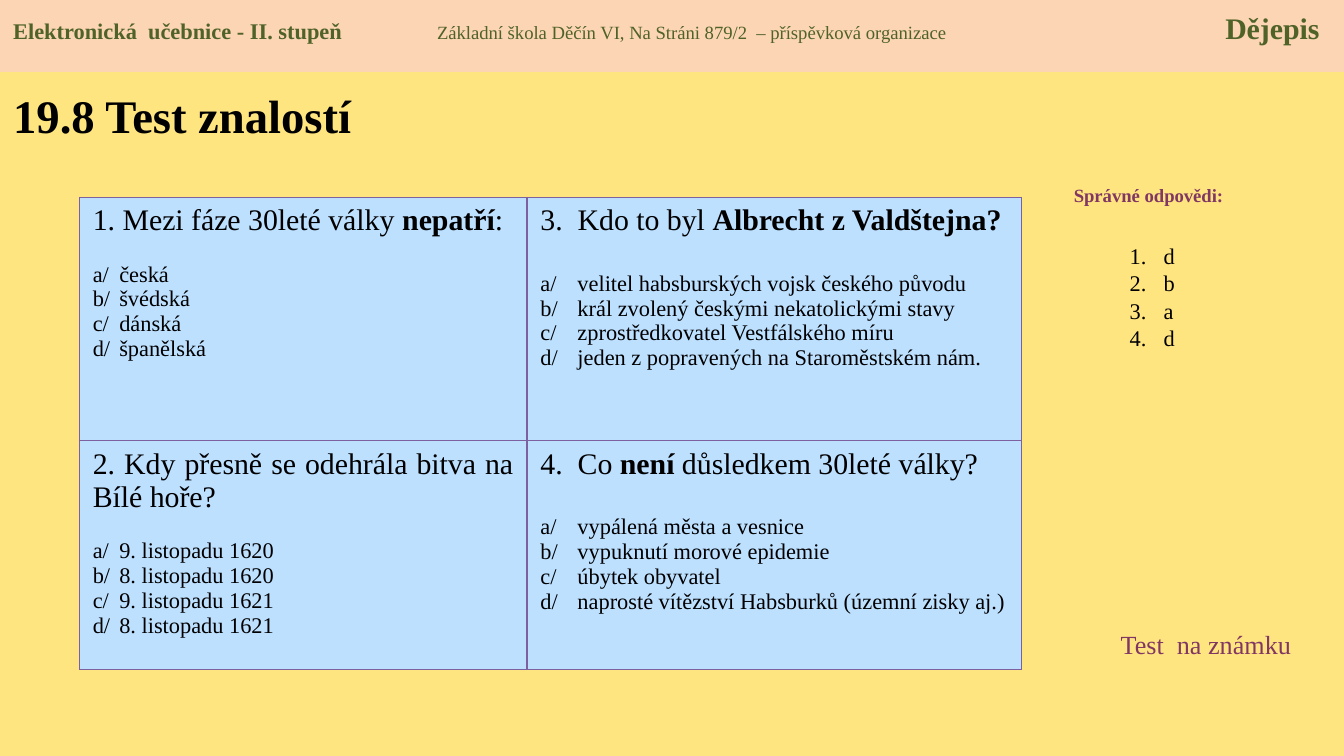
from lxml import etree
from pptx import Presentation
from pptx import util as u
from pptx.dml.color import RGBColor
from pptx.enum import shapes, text
from pptx.oxml import ns

FONT = "Times New Roman"
COLORS = {
    "page": "FFE57F",
    "band": "FCD5B5",
    "green": "4F6228",
    "purple": "813763",
    "black": "000000",
    "cell": "BDE0FF",
    "border": "7D60A0",
}
LEFT_GAP, RIGHT_GAP = 13.4, 18.3
LEFT_HANG, RIGHT_HANG = 0.5, 0.7
QUESTIONS = [
    [
        ([("1. Mezi fáze 30leté války ", False), ("nepatří", True), (":", False)],
         ["česká", "švédská", "dánská", "španělská"]),
        ([("3.  Kdo to byl ", False), ("Albrecht z Valdštejna?", True)],
         ["velitel habsburských vojsk českého původu",
          "král zvolený českými nekatolickými stavy",
          "zprostředkovatel Vestfálského míru",
          "jeden z popravených na Staroměstském nám."]),
    ],
    [
        ([("2. Kdy přesně se odehrála bitva na Bílé hoře?", False)],
         ["9. listopadu 1620", "8. listopadu 1620",
          "9. listopadu 1621", "8. listopadu 1621"]),
        ([("4.  Co ", False), ("není ", True), ("důsledkem 30leté války?", False)],
         ["vypálená města a vesnice", "vypuknutí morové epidemie",
          "úbytek obyvatel",
          "naprosté vítězství Habsburků (územní zisky aj.)"]),
    ],
]


def rgb(name):
    return RGBColor.from_string(COLORS[name])


def set_font(font, size, color="black", bold=None):
    font.name = FONT
    font.size = u.Pt(size)
    font.color.rgb = rgb(color)
    font.bold = bold


def hang(paragraph, indent):
    properties = paragraph._p.get_or_add_pPr()
    properties.set("marL", str(u.Cm(indent)))
    properties.set("indent", str(-u.Cm(indent)))
    return properties


def add_label(slide, box, wording, size, color="black", bold=False,
              align=text.PP_ALIGN.LEFT, anchor=text.MSO_ANCHOR.TOP):
    frame = slide.shapes.add_textbox(*map(u.Cm, box)).text_frame
    frame.word_wrap = True
    frame.vertical_anchor = anchor
    line = frame.paragraphs[0]
    line.text = wording
    line.alignment = align
    set_font(line.font, size, color, bold)


def add_header(slide):
    band = slide.shapes.add_shape(
        shapes.MSO_SHAPE.RECTANGLE, 0, 0, u.Cm(25.4), u.Cm(1.36))
    band.shadow.inherit = False
    band.fill.solid()
    band.fill.fore_color.rgb = rgb("band")
    band.line.fill.background()
    frame = band.text_frame
    frame.vertical_anchor = text.MSO_ANCHOR.TOP
    frame.margin_top = u.Cm(0.18)
    line = frame.paragraphs[0]
    line.alignment = text.PP_ALIGN.LEFT
    stops = etree.SubElement(line._p.get_or_add_pPr(), ns.qn("a:tabLst"))
    for position, side in ((8.01, "l"), (24.69, "r")):
        etree.SubElement(stops, ns.qn("a:tab"), pos=str(u.Cm(position)), algn=side)
    for wording, size, bold in (
            ("Elektronická  učebnice - II. stupeň\t", 12, True),
            ("Základní škola Děčín VI, Na Stráni 879/2  – příspěvková organizace\t",
             10, False),
            ("Dějepis", 16, True)):
        run = line.add_run()
        run.text = wording
        set_font(run.font, size, "green", bold)


def add_borders(cell):
    properties = cell._tc.get_or_add_tcPr()
    for position, side in enumerate(("lnL", "lnR", "lnT", "lnB")):
        edge = etree.Element(ns.qn(f"a:{side}"), w=str(u.Pt(0.75)))
        fill = etree.SubElement(edge, ns.qn("a:solidFill"))
        etree.SubElement(fill, ns.qn("a:srgbClr"), val=COLORS["border"])
        properties.insert(position, edge)


def fill_cell(cell, question, options, gap, indent):
    cell.fill.solid()
    cell.fill.fore_color.rgb = rgb("cell")
    add_borders(cell)
    frame = cell.text_frame
    heading = frame.paragraphs[0]
    heading.alignment = text.PP_ALIGN.JUSTIFY
    set_font(heading.font, 16)
    for wording, bold in question:
        run = heading.add_run()
        run.text = wording
        set_font(run.font, 16, bold=bold)
    for letter, option in zip("abcd", options):
        line = frame.add_paragraph()
        line.text = f"{letter}/\t{option}"
        line.alignment = text.PP_ALIGN.JUSTIFY
        line.line_spacing = u.Pt(13.3)
        line.space_before = u.Pt(gap if letter == "a" else 0)
        hang(line, indent)
        set_font(line.font, 12)


def add_questions(slide):
    table = slide.shapes.add_table(
        2, 2, u.Cm(1.5), u.Cm(3.73), u.Cm(17.81), u.Cm(8.92)).table
    table.first_row = table.horz_banding = False
    for column, width in zip(table.columns, (8.46, 9.35)):
        column.width = u.Cm(width)
    for row, height in zip(table.rows, (4.6, 4.32)):
        row.height = u.Cm(height)
    layout = ((LEFT_GAP, LEFT_HANG), (RIGHT_GAP, RIGHT_HANG))
    for row, questions in zip(table.rows, QUESTIONS):
        for cell, (question, options), (gap, indent) in zip(
                row.cells, questions, layout):
            fill_cell(cell, question, options, gap, indent)


def add_answers(slide):
    frame = slide.shapes.add_textbox(
        u.Cm(21.1), u.Cm(3.94), u.Cm(1.4), u.Cm(3.33)).text_frame
    frame.word_wrap = True
    frame.margin_top = u.Cm(0.64)
    for index, answer in enumerate("dbad"):
        line = frame.add_paragraph() if index else frame.paragraphs[0]
        line.text = answer
        line.line_spacing = u.Pt(14.5)
        etree.SubElement(hang(line, 0.64), ns.qn("a:buAutoNum"),
                         type="arabicPeriod")
        set_font(line.font, 12)


def main():
    deck = Presentation()
    deck.slide_width, deck.slide_height = u.Cm(25.4), u.Cm(14.29)
    slide = deck.slides.add_slide(deck.slide_layouts[6])
    slide.background.fill.solid()
    slide.background.fill.fore_color.rgb = rgb("page")
    add_label(slide, (0, 1.35, 9.19, 1.65), "19.8 Test znalostí", 25, bold=True,
              anchor=text.MSO_ANCHOR.MIDDLE)
    add_label(slide, (19.71, 3.35, 3.99, 0.69), "Správné odpovědi:", 10,
              "purple", True, text.PP_ALIGN.CENTER)
    add_questions(slide)
    add_answers(slide)
    add_label(slide, (20.93, 11.76, 3.99, 0.86), "Test  na známku", 14, "purple")
    add_header(slide)
    deck.save("out.pptx")


if __name__ == "__main__":
    main()
